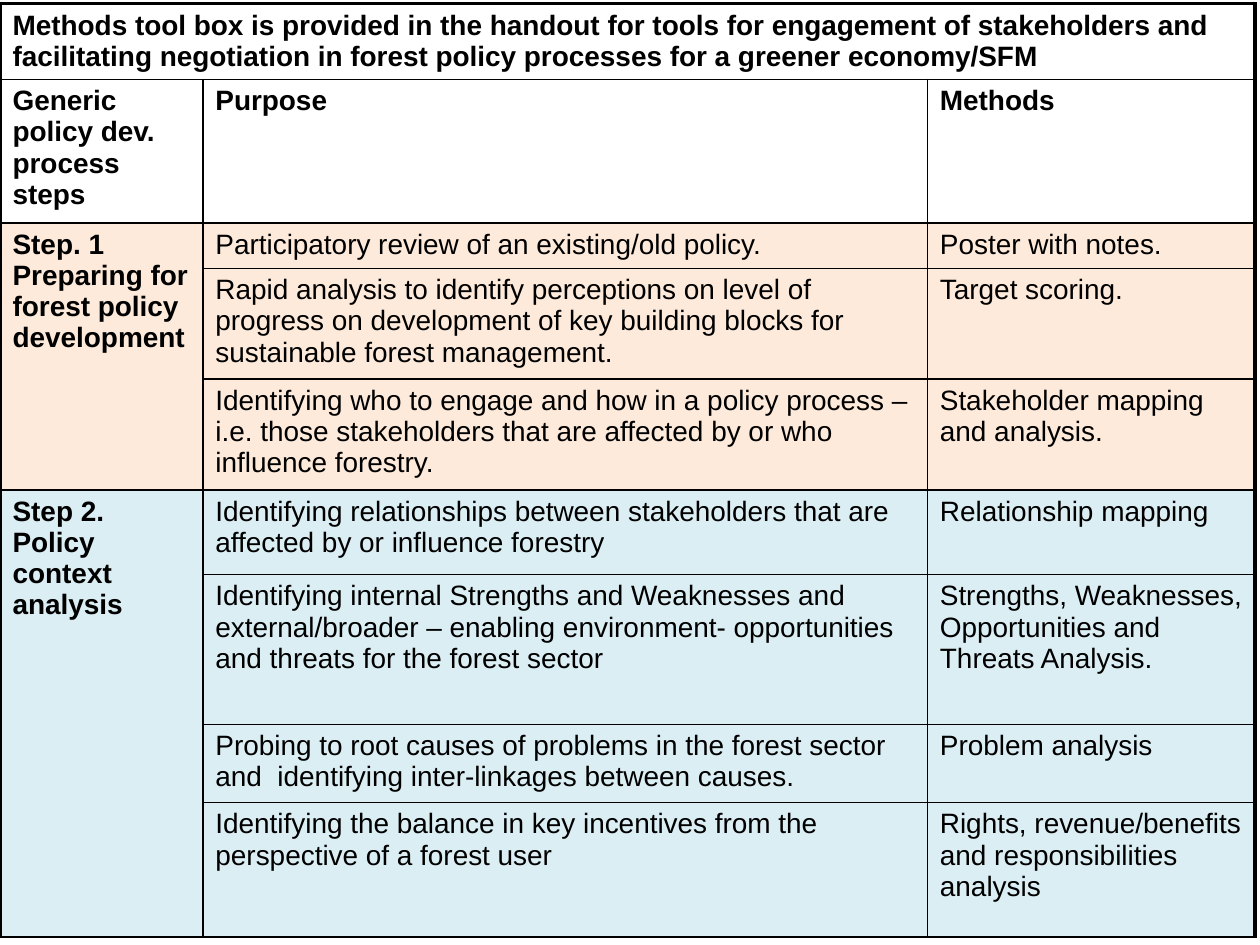
"""Build a slide with the table of engagement methods for each forest policy step."""
from dataclasses import dataclass

from lxml.etree import SubElement
from pptx import Presentation
from pptx.dml.color import RGBColor
from pptx.oxml.ns import qn
from pptx.util import Inches, Pt


@dataclass(frozen=True)
class Theme:
    font: str = "Arial"
    text_size: float = 16
    ink: str = "000000"
    header_fill: str = "FFFFFF"
    preparing_fill: str = "FDEADA"
    context_fill: str = "DBEEF4"
    inner_border: float = 1
    outer_border: float = 2.25


theme = Theme()


def add_border(cell, side, points):
    line = SubElement(cell._tc.get_or_add_tcPr(), qn(f"a:ln{side}"), w=str(Pt(points)))
    fill = SubElement(line, qn("a:solidFill"))
    SubElement(fill, qn("a:srgbClr"), val=theme.ink)


def write_cell(cell, text, bold):
    cell.text_frame.text = text
    paragraph = cell.text_frame.paragraphs[0]
    spacing = SubElement(paragraph._p.get_or_add_pPr(), qn("a:spcBef"))
    SubElement(spacing, qn("a:spcPct"), val="20000")
    font = paragraph.runs[0].font
    font.name = theme.font
    font.size = Pt(theme.text_size)
    font.bold = bold
    font.color.rgb = RGBColor.from_string(theme.ink)


heading = (
    "Methods tool box is provided in the handout for tools for engagement of "
    "stakeholders and facilitating negotiation in forest policy processes for a "
    "greener economy/SFM"
)
sections = [
    (theme.header_fill, [(0.6, heading, "", "")]),
    (theme.header_fill, [(1.14, "Generic policy dev. process steps", "Purpose", "Methods")]),
    (theme.preparing_fill, [
        (0.36, "Step. 1 Preparing for forest policy development",
         "Participatory review of an existing/old policy.",
         "Poster with notes."),
        (0.88, "",
         "Rapid analysis to identify perceptions on level of progress on development "
         "of key building blocks for sustainable forest management.",
         "Target scoring."),
        (0.88, "",
         "Identifying who to engage and how in a policy process – i.e. those "
         "stakeholders that are affected by or who influence forestry.",
         "Stakeholder mapping and analysis."),
    ]),
    (theme.context_fill, [
        (0.67, "Step 2. Policy context analysis",
         "Identifying relationships between stakeholders that are affected by or "
         "influence forestry",
         "Relationship mapping"),
        (1.19, "",
         "Identifying internal Strengths and Weaknesses and external/broader – "
         "enabling environment- opportunities and threats for the forest sector",
         "Strengths, Weaknesses, Opportunities and Threats Analysis."),
        (0.62, "",
         "Probing to root causes of problems in the forest sector and  identifying "
         "inter-linkages between causes.",
         "Problem analysis"),
        (1.07, "",
         "Identifying the balance in key incentives from the perspective of a forest user",
         "Rights, revenue/benefits and responsibilities analysis"),
    ]),
]
column_widths = [1.61, 5.75, 2.6]
rows = [(fill, row) for fill, section in sections for row in section]
last_column = len(column_widths) - 1

presentation = Presentation()
presentation.slide_width = Inches(10)
presentation.slide_height = Inches(7.5)
slide = presentation.slides.add_slide(presentation.slide_layouts[6])

table_shape = slide.shapes.add_table(
    len(rows), len(column_widths), Inches(0), Inches(0.03),
    Inches(sum(column_widths)), Inches(sum(row[0] for fill, row in rows)),
)
table = table_shape.table
table.first_row = False
table.horz_banding = False
for column, width in zip(table.columns, column_widths):
    column.width = Inches(width)

for row_index, (fill, (height, *texts)) in enumerate(rows):
    table.rows[row_index].height = Inches(height)
    for column_index, text in enumerate(texts):
        cell = table.cell(row_index, column_index)
        outer_sides = {
            "L": column_index == 0,
            "R": column_index == last_column or row_index == 0,
            "T": row_index == 0,
            "B": False,
        }
        for side, is_outer in outer_sides.items():
            add_border(cell, side, theme.outer_border if is_outer else theme.inner_border)
        cell.fill.solid()
        cell.fill.fore_color.rgb = RGBColor.from_string(fill)
        if text:
            write_cell(cell, text, column_index == 0 or row_index < 2)

table.cell(0, 0).merge(table.cell(0, last_column))
first_row = 0
for fill, section in sections:
    if len(section) > 1:
        table.cell(first_row, 0).merge(table.cell(first_row + len(section) - 1, 0))
    first_row += len(section)

presentation.save("out.pptx")
